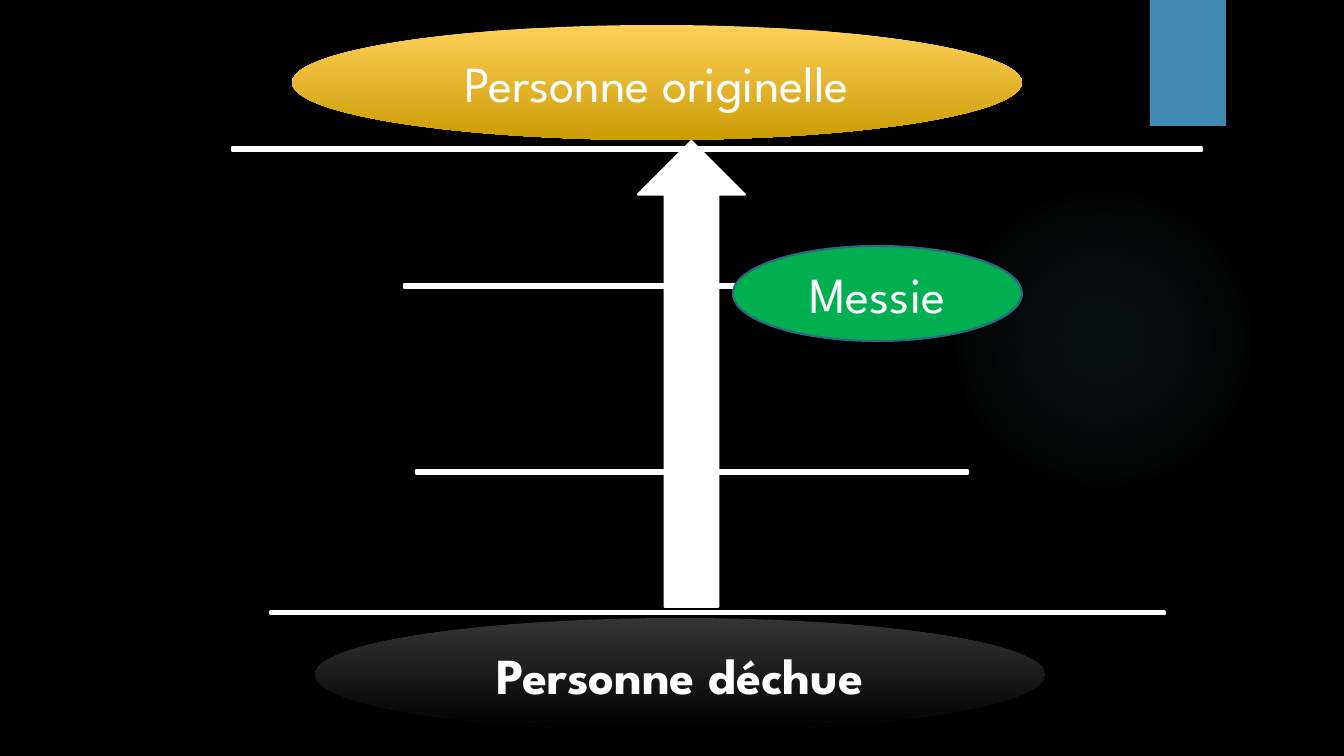
"""Build a slide showing the rise from the fallen person to the original person."""
from pptx import Presentation
from pptx.dml.color import RGBColor
from pptx.enum.shapes import MSO_SHAPE
from pptx.enum.text import MSO_ANCHOR, PP_ALIGN
from pptx.oxml import parse_xml
from pptx.oxml.ns import nsdecls
from pptx.util import Emu, Pt

OVAL = MSO_SHAPE.OVAL
RECTANGLE = MSO_SHAPE.RECTANGLE
MINUS = MSO_SHAPE.MATH_MINUS
UP_ARROW = MSO_SHAPE.UP_ARROW
CENTER = PP_ALIGN.CENTER
MIDDLE = MSO_ANCHOR.MIDDLE

BLACK = RGBColor(0x00, 0x00, 0x00)
WHITE = RGBColor(0xFF, 0xFF, 0xFF)
BLUE = RGBColor(0x41, 0x8A, 0xB3)
DARK_BLUE = RGBColor(0x30, 0x66, 0x84)
GREEN = RGBColor(0x00, 0xB0, 0x50)
LIGHT_GOLD = RGBColor(0xFE, 0xD0, 0x59)
DARK_GOLD = RGBColor(0xCC, 0x9C, 0x05)
CHARCOAL = RGBColor(0x35, 0x35, 0x35)
PALE_BLUE = RGBColor(0x8A, 0xBA, 0xD4)

FONT = "League Spartan"
EMU_PER_PX = 914400 / 100.8

presentation = Presentation()
presentation.slide_width = Emu(round(1344 * EMU_PER_PX))
presentation.slide_height = Emu(round(756 * EMU_PER_PX))
slide = presentation.slides.add_slide(presentation.slide_layouts[6])
slide.background.fill.solid()
slide.background.fill.fore_color.rgb = BLACK


def add_figure(kind, box, colors=(), outline=None):
    """Add a shape with one fill colour, or two for a vertical gradient."""
    shape = slide.shapes.add_shape(kind, *(Emu(round(px * EMU_PER_PX)) for px in box))
    shape.shadow.inherit = False
    if len(colors) == 1:
        shape.fill.solid()
        shape.fill.fore_color.rgb = colors[0]
    elif colors:
        shape.fill.gradient()
        shape.fill.gradient_angle = 270
        for stop, color, position in zip(shape.fill.gradient_stops, colors, (0, 1)):
            stop.color.rgb = color
            stop.position = position
    if outline is None:
        shape.line.fill.background()
    else:
        shape.line.color.rgb = outline
        shape.line.width = Pt(1.5)
    return shape


def add_label(shape, text, bold=False):
    """Write a centred white label in a shape."""
    shape.text_frame.word_wrap = True
    shape.text_frame.vertical_anchor = MIDDLE
    paragraph = shape.text_frame.paragraphs[0]
    paragraph.text = text
    paragraph.alignment = CENTER
    paragraph.font.name = FONT
    paragraph.font.size = Pt(36)
    paragraph.font.bold = bold
    paragraph.font.color.rgb = WHITE


glow = add_figure(OVAL, (948, 184, 310, 310))
glow_stops = "".join(
    f'<a:gs pos="{position * 1000}"><a:srgbClr val="{PALE_BLUE}">'
    f'<a:alpha val="{opacity * 1000}"/></a:srgbClr></a:gs>'
    for position, opacity in ((0, 7), (36, 6), (69, 0))
)
glow_fill = parse_xml(
    f'<a:gradFill {nsdecls("a")}><a:gsLst>{glow_stops}</a:gsLst><a:path path="circle">'
    '<a:fillToRect l="50000" t="50000" r="50000" b="50000"/></a:path></a:gradFill>'
)
glow.element.spPr.insert(2, glow_fill)

add_figure(RECTANGLE, (1150, 0, 76, 126), [BLUE])

original_person = add_figure(OVAL, (292, 25, 730, 115), [LIGHT_GOLD, DARK_GOLD])
add_label(original_person, "Personne originelle")

LEVELS = [
    (57, 141, 1320, 17),
    (316, 463, 752, 18),
    (304, 279, 752, 14),
    (109, 607, 1217, 12),
]
for level in LEVELS:
    add_figure(MINUS, level, [WHITE], WHITE)

fallen_person = add_figure(OVAL, (315, 618, 730, 113), [CHARCOAL, BLACK])
add_label(fallen_person, "Personne déchue", bold=True)

add_figure(UP_ARROW, (638, 141, 107, 466), [WHITE], WHITE)

messiah = add_figure(OVAL, (733, 246, 289, 95), [GREEN], DARK_BLUE)
add_label(messiah, "Messie")

presentation.save("out.pptx")
